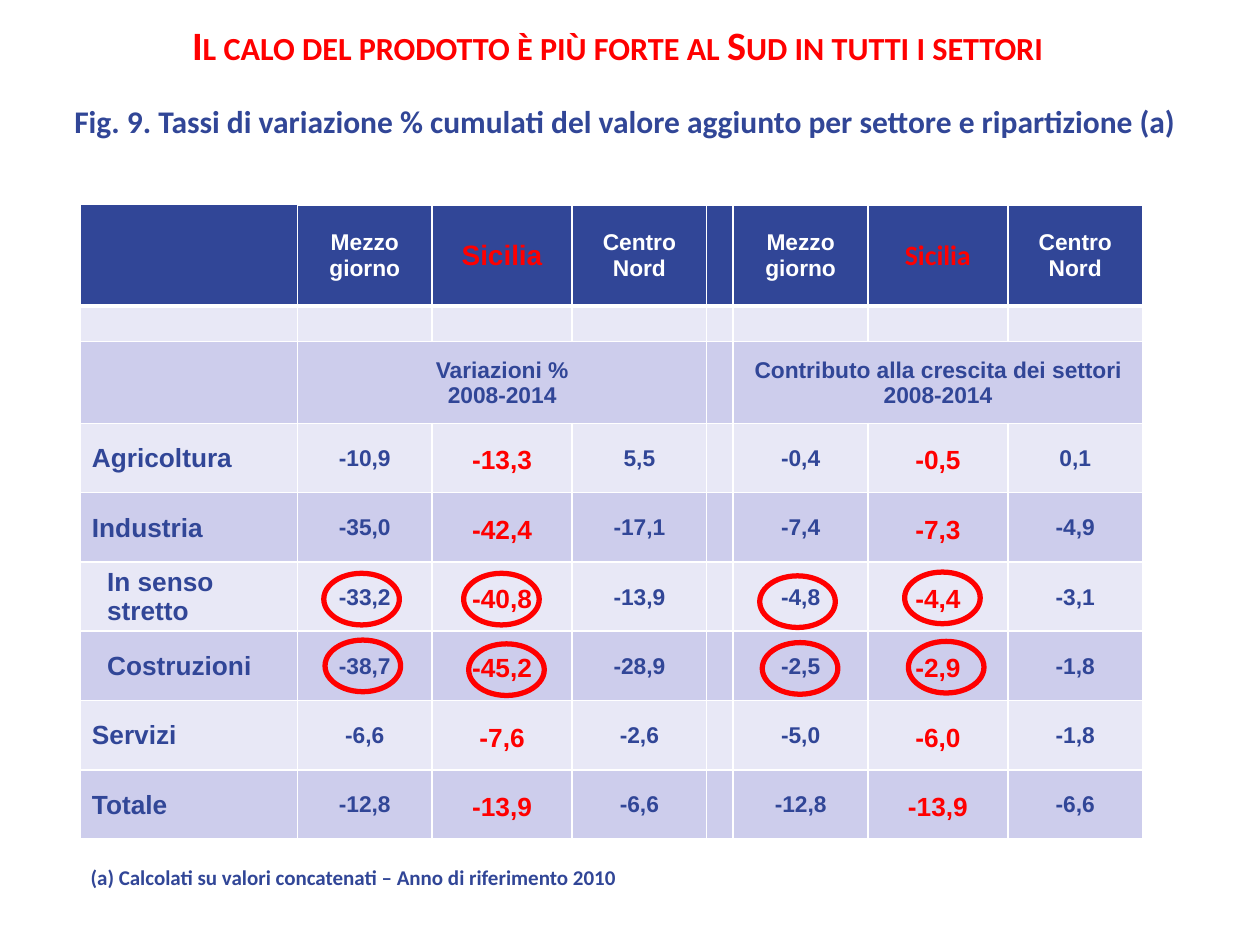
from lxml import etree
from pptx import Presentation
from pptx import util as u
from pptx.dml.color import RGBColor
from pptx.enum import shapes, text
from pptx.oxml import ns

BLUE, RED, WHITE = "314697", "FF0000", "FFFFFF"
LIGHT, DARK = "E8E8F6", "CDCDEC"

TITLE = "Il calo del prodotto è più forte al Sud in tutti i settori"
CAPTIONS = [
    ("Fig. 9. Tassi di variazione % cumulati del valore aggiunto per settore e ripartizione (a)",
     (0.5, 0.79, 9.03, 0.38), 18),
    ("(a) Calcolati su valori concatenati – Anno di riferimento 2010", (0.63, 6.83, 9.03, 0.28), 12),
]
AREAS = ["Mezzo\ngiorno", "Sicilia", "Centro\nNord"]
ROWS = [
    ["", *AREAS, "", *AREAS],
    [""] * 8,
    ["", "Variazioni %\n2008-2014", "", "", "", "Contributo alla crescita dei settori 2008-2014", "", ""],
    ["Agricoltura", "-10,9", "-13,3", "5,5", "", "-0,4", "-0,5", "0,1"],
    ["Industria", "-35,0", "-42,4", "-17,1", "", "-7,4", "-7,3", "-4,9"],
    ["In senso stretto", "-33,2", "-40,8", "-13,9", "", "-4,8", "-4,4", "-3,1"],
    ["Costruzioni", "-38,7", "-45,2", "-28,9", "", "-2,5", "-2,9", "-1,8"],
    ["Servizi", "-6,6", "-7,6", "-2,6", "", "-5,0", "-6,0", "-1,8"],
    ["Totale", "-12,8", "-13,9", "-6,6", "", "-12,8", "-13,9", "-6,6"],
]
SUBSECTORS = ("In senso stretto", "Costruzioni")
SICILY_COLUMNS = (2, 6)
COLUMN_WIDTHS = [1.72, 1.07, 1.11, 1.07, 0.21, 1.07, 1.11, 1.07]
ROW_HEIGHTS = [0.81, 0.28, 0.65] + [0.55] * 6
CIRCLES = [(2.58, 5.08), (3.72, 5.11), (2.57, 4.55), (3.68, 4.55),
           (6.03, 4.57), (7.18, 4.54), (6.05, 5.1), (7.21, 5.09)]


def color(value):
    return RGBColor.from_string(value)


def inches(*values):
    return [u.Inches(value) for value in values]


def style(paragraph, size, hue, name, align=text.PP_ALIGN.LEFT, spacing=None):
    font = paragraph.font
    font.size, font.name, font.bold = u.Pt(size), name, True
    font.color.rgb = color(hue)
    paragraph.alignment = align
    paragraph.line_spacing = spacing


def set_margins(target, left, top, right, bottom):
    target.margin_left, target.margin_top, target.margin_right, target.margin_bottom = inches(
        left, top, right, bottom)


def set_borders(cell, top, bottom):
    properties = cell._tc.get_or_add_tcPr()
    for side, width in (("L", 1), ("R", 1), ("T", top), ("B", bottom)):
        line = etree.SubElement(properties, ns.qn(f"a:ln{side}"), w=str(u.Pt(width)))
        fill = etree.SubElement(line, ns.qn("a:solidFill"))
        etree.SubElement(fill, ns.qn("a:srgbClr"), val=WHITE)


def format_cell(cell, row, column, content):
    top = 3 if row == 1 or (row == 0 and column > 0) else 1
    set_borders(cell, top, 3 if row == 0 else 1)
    cell.fill.solid()
    cell.fill.fore_color.rgb = color(BLUE if row == 0 else LIGHT if row % 2 else DARK)
    cell.vertical_anchor = text.MSO_ANCHOR.MIDDLE
    set_margins(cell, 0.01, 0.01, 0.01, 0)
    cell.text = content

    size, hue, name, spacing = 13, WHITE if row == 0 else BLUE, "Arial", None
    align = text.PP_ALIGN.CENTER
    if content and column == 0:
        size, align = 15, text.PP_ALIGN.LEFT
    elif content and column in SICILY_COLUMNS:
        size, hue = (16 if row == 0 else 15), RED
        spacing = 1.15 if row else None
        name = "Calibri" if row == 0 and column == 6 else "Arial"
    for paragraph in cell.text_frame.paragraphs:
        style(paragraph, size, hue, name, align, spacing)
        if content and column == 0:
            indent = 0.2 if content in SUBSECTORS else 0.08
            paragraph._p.get_or_add_pPr().set("marL", str(u.Inches(indent)))


def add_title(slide):
    title = slide.shapes.title
    title.left, title.top, title.width, title.height = inches(0.4, 0.12, 9, 0.49)
    frame = title.text_frame
    frame.text = TITLE
    set_margins(frame, 0.09, 0.04, 0.09, 0.04)
    frame.vertical_anchor = text.MSO_ANCHOR.TOP
    paragraph = frame.paragraphs[0]
    style(paragraph, 23, RED, "Calibri", text.PP_ALIGN.CENTER)
    paragraph.runs[0].font._element.set("cap", "small")


def add_captions(slide):
    for content, box, size in CAPTIONS:
        frame = slide.shapes.add_textbox(*inches(*box)).text_frame
        frame.text = content
        frame.word_wrap = True
        frame.auto_size = text.MSO_AUTO_SIZE.SHAPE_TO_FIT_TEXT
        set_margins(frame, 0.09, 0.04, 0.09, 0.04)
        style(frame.paragraphs[0], size, BLUE, "Calibri", spacing=0.97)


def add_sector_table(slide):
    table = slide.shapes.add_table(
        len(ROWS), len(COLUMN_WIDTHS), *inches(0.64, 1.62, 8.45, 5.04)).table
    for column, width in zip(table.columns, COLUMN_WIDTHS):
        column.width = u.Inches(width)
    for row, height in zip(table.rows, ROW_HEIGHTS):
        row.height = u.Inches(height)
    for row, values in enumerate(ROWS):
        for column, content in enumerate(values):
            format_cell(table.cell(row, column), row, column, content)
    for first in (1, 5):
        table.cell(2, first).merge(table.cell(2, first + 2))


def add_circles(slide):
    for left, top in CIRCLES:
        circle = slide.shapes.add_shape(shapes.MSO_SHAPE.OVAL, *inches(left, top, 0.6, 0.41))
        circle.shadow.inherit = False
        circle.fill.background()
        circle.line.color.rgb = color(RED)
        circle.line.width = u.Pt(3)


def main():
    presentation = Presentation()
    presentation.slide_width, presentation.slide_height = inches(10, 7.5)
    slide = presentation.slides.add_slide(presentation.slide_layouts.get_by_name("Title Only"))
    add_title(slide)
    add_captions(slide)
    add_sector_table(slide)
    add_circles(slide)
    presentation.save("out.pptx")


if __name__ == "__main__":
    main()
